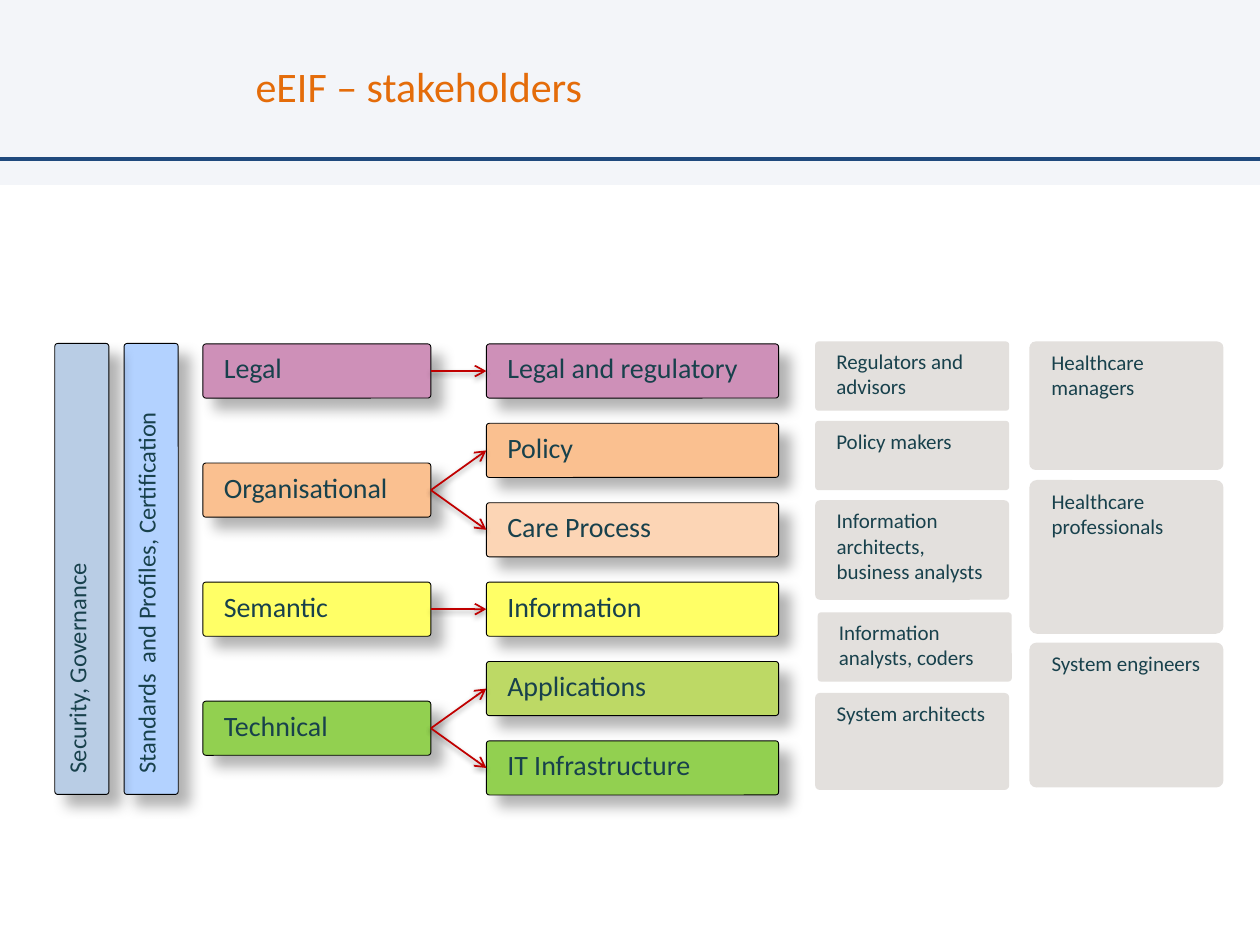
from dataclasses import dataclass

from lxml import etree
from pptx import Presentation
from pptx.dml.color import RGBColor
from pptx.enum.shapes import MSO_CONNECTOR, MSO_SHAPE
from pptx.enum.text import MSO_ANCHOR, PP_ALIGN
from pptx.oxml.ns import qn
from pptx.util import Inches, Pt

RECTANGLE = MSO_SHAPE.RECTANGLE
ROUNDED = MSO_SHAPE.ROUNDED_RECTANGLE
STRAIGHT = MSO_CONNECTOR.STRAIGHT
LEFT = PP_ALIGN.LEFT
TOP, MIDDLE = MSO_ANCHOR.TOP, MSO_ANCHOR.MIDDLE
LEFT_SITE, RIGHT_SITE = 1, 3


@dataclass(frozen=True)
class Theme:
    font: str = "Calibri"
    background: str = "F3F5F9"
    panel: str = "FFFFFF"
    rule: str = "1F497D"
    title: str = "E46C0A"
    text: str = "18414C"
    outline: str = "000000"
    arrow: str = "C00000"
    legal: str = "CE90B8"
    policy: str = "FAC090"
    care: str = "FCD5B5"
    semantic: str = "FFFF66"
    applications: str = "BDD965"
    technical: str = "92D050"
    governance: str = "B9CDE5"
    standards: str = "B3D2FF"
    stakeholder: str = "E3E0DD"
    title_size: int = 24
    level_size: int = 16
    pillar_size: int = 14
    stakeholder_size: int = 12


theme = Theme()


def add_shadow(effects, opacity, blur, distance, angle):
    """Add a black outer shadow; opacity in percent, blur and distance in points."""
    shadow = etree.SubElement(
        effects, qn("a:outerShdw"), blurRad=str(Pt(blur)), dist=str(Pt(distance)),
        dir=str(angle * 60000), algn="t", rotWithShape="0")
    color = etree.SubElement(shadow, qn("a:srgbClr"), val=theme.outline)
    etree.SubElement(color, qn("a:alpha"), val=str(opacity * 1000))


def add_box(label, left, top, width, height, fill, size, corner=0.056, outlined=True):
    shape = slide.shapes.add_shape(
        ROUNDED, Inches(left), Inches(top), Inches(width), Inches(height))
    shape.adjustments[0] = corner
    shape.fill.solid()
    shape.fill.fore_color.rgb = RGBColor.from_string(fill)
    shape.shadow.inherit = False
    if outlined:
        shape.line.color.rgb = RGBColor.from_string(theme.outline)
        shape.line.width = Pt(0.5)
        add_shadow(shape.element.spPr.find(qn("a:effectLst")), 30, 8, 9, 45)
    else:
        shape.line.fill.background()
    frame = shape.text_frame
    frame.word_wrap = True
    frame.vertical_anchor = TOP
    frame.margin_left, frame.margin_right = Inches(0.16), Inches(0.1)
    frame.margin_top = frame.margin_bottom = Inches(0.05)
    paragraph = frame.paragraphs[0]
    paragraph.alignment = LEFT
    run = paragraph.add_run()
    run.text = label
    run.font.name = theme.font
    run.font.size = Pt(size)
    run.font.color.rgb = RGBColor.from_string(theme.text)
    return shape


presentation = Presentation()
presentation.slide_width = Inches(10)
presentation.slide_height = Inches(7.5)
slide = presentation.slides.add_slide(presentation.slide_layouts[6])
slide.background.fill.solid()
slide.background.fill.fore_color.rgb = RGBColor.from_string(theme.background)

# Header rule, content panel and title
rule = slide.shapes.add_connector(STRAIGHT, Inches(10), Inches(1.26), Inches(0), Inches(1.26))
rule.line.color.rgb = RGBColor.from_string(theme.rule)
rule.line.width = Pt(2.25)
etree.SubElement(rule.element.spPr, qn("a:effectLst"))

panel = slide.shapes.add_shape(RECTANGLE, Inches(0), Inches(1.47), Inches(10), Inches(6.03))
panel.fill.solid()
panel.fill.fore_color.rgb = RGBColor.from_string(theme.panel)
panel.line.fill.background()
panel.shadow.inherit = False

title = slide.shapes.add_textbox(Inches(1.93), Inches(0.21), Inches(6.58), Inches(0.94))
title.text_frame.word_wrap = True
title.text_frame.vertical_anchor = MIDDLE
run = title.text_frame.paragraphs[0].add_run()
run.text = "eEIF – stakeholders"
run.font.name = theme.font
run.font.size = Pt(theme.title_size)
run.font.color.rgb = RGBColor.from_string(theme.title)

# Each level is centred on its sublevels, which fill the rows in order
FIRST_ROW, ROW_PITCH, ROW_HEIGHT = 2.73, 0.63, 0.43
levels = [
    ("Legal", theme.legal, [("Legal and regulatory", theme.legal)]),
    ("Organisational", theme.policy,
     [("Policy", theme.policy), ("Care Process", theme.care)]),
    ("Semantic", theme.semantic, [("Information", theme.semantic)]),
    ("Technical", theme.technical,
     [("Applications", theme.applications), ("IT Infrastructure", theme.technical)]),
]
links = []
row = 0
for level, level_fill, sublevels in levels:
    level_top = FIRST_ROW + (row + (len(sublevels) - 1) / 2) * ROW_PITCH
    level_box = add_box(level, 1.61, level_top, 1.81, ROW_HEIGHT, level_fill, theme.level_size)
    for sublevel, fill in sublevels:
        sublevel_box = add_box(sublevel, 3.86, FIRST_ROW + row * ROW_PITCH, 2.32, ROW_HEIGHT,
                               fill, theme.level_size)
        links.append((level_box, sublevel_box))
        row += 1

for level_box, sublevel_box in links:
    arrow = slide.shapes.add_connector(STRAIGHT, 0, 0, 0, 0)
    arrow.begin_connect(level_box, RIGHT_SITE)
    arrow.end_connect(sublevel_box, LEFT_SITE)
    arrow.line.color.rgb = RGBColor.from_string(theme.arrow)
    arrow.line.width = Pt(1)
    properties = arrow.element.spPr
    etree.SubElement(properties.find(qn("a:ln")), qn("a:tailEnd"), type="arrow")
    add_shadow(etree.SubElement(properties, qn("a:effectLst")), 38, 3.1, 1.6, 90)

# Pillars spanning all levels, read from bottom to top
pillars = [
    ("Standards  and Profiles, Certification", -0.59, theme.standards),
    ("Security, Governance", -1.14, theme.governance),
]
for label, left, fill in pillars:
    pillar = add_box(label, left, 4.3, 3.58, ROW_HEIGHT, fill, theme.pillar_size)
    pillar.rotation = 270

# Stakeholders: label, left, top, height
stakeholders = [
    ("Regulators and advisors", 6.47, 2.71, 0.55),
    ("Policy makers", 6.47, 3.34, 0.55),
    ("Information architects, business analysts", 6.47, 3.97, 0.79),
    ("Information analysts, coders", 6.49, 4.86, 0.55),
    ("System architects", 6.47, 5.5, 0.77),
    ("Healthcare managers", 8.17, 2.71, 1.02),
    ("Healthcare professionals", 8.17, 3.81, 1.22),
    ("System engineers", 8.17, 5.1, 1.15),
]
for label, left, top, height in stakeholders:
    add_box(label, left, top, 1.54, height, theme.stakeholder, theme.stakeholder_size,
            corner=0.049, outlined=False)

presentation.save("out.pptx")
